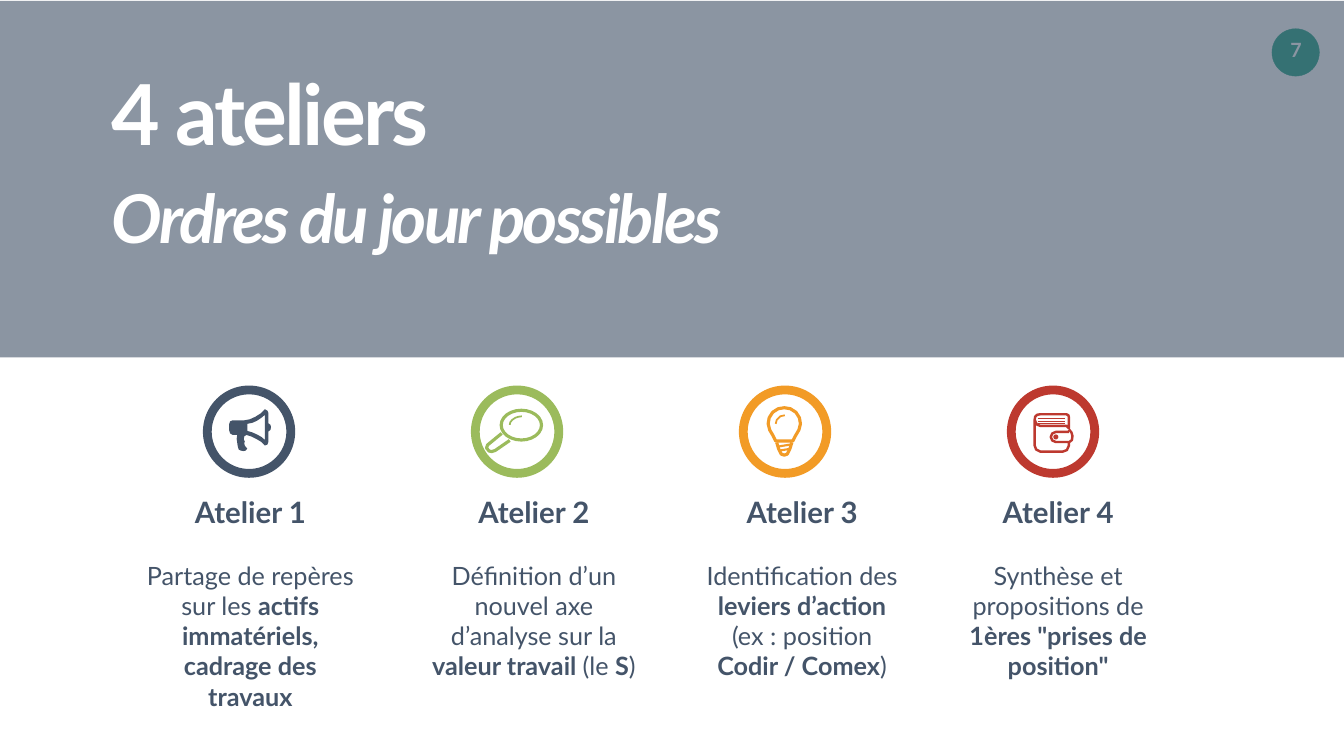
"""Builds the slide of four workshops with their possible agendas."""
from lxml import etree
from pptx import Presentation
from pptx.dml.color import RGBColor
from pptx.enum.shapes import MSO_SHAPE as SHAPE
from pptx.enum.text import MSO_AUTO_SIZE as AUTO, PP_ALIGN as ALIGN
from pptx.oxml.ns import qn
from pptx.util import Inches, Pt

NAVY = RGBColor(0x44, 0x54, 0x69)
GREEN = RGBColor(0x9B, 0xBB, 0x5C)
ORANGE = RGBColor(0xF2, 0x9B, 0x26)
RED = RGBColor(0xBD, 0x39, 0x2F)
TEAL = RGBColor(0x1E, 0xA1, 0x85)
WHITE = RGBColor(0xFF, 0xFF, 0xFF)

prs = Presentation()
prs.slide_width, prs.slide_height = Inches(26.66), Inches(15)
COL, ROW = prs.slide_width / 100, prs.slide_height / 100
UNIT = Inches(0.01)
s = prs.slides.add_slide(prs.slide_layouts[6])


def paint(sp, fill=None, line=None, width=0):
    sp.shadow.inherit = False
    for part, color in ((sp.fill, fill), (sp.line.fill, line)):
        if color is None:
            part.background()
        else:
            part.solid()
            part.fore_color.rgb = color
    if line is not None:
        sp.line.width = Pt(width)


def add_run(p, text, size, color, **style):
    r = p.add_run()
    r.text = text
    r.font.color.rgb = color
    for name, value in {"name": "Lato", "size": Pt(size), **style}.items():
        setattr(r.font, name, value)
    return r


badge = s.shapes.add_shape(SHAPE.OVAL, int(94.64 * COL), int(3.8 * ROW), Inches(0.94), Inches(0.94))
paint(badge, TEAL, TEAL, 0.5)
tb = s.shapes.add_textbox(int(94.79 * COL), int(4.4 * ROW), int(3.3 * COL), int(4.47 * ROW))
tf = tb.text_frame
for name, value in {"word_wrap": False, "margin_left": Inches(0.2), "margin_right": Inches(0.2),
                    "margin_top": Inches(0.1), "margin_bottom": Inches(0.1)}.items():
    setattr(tf, name, value)
tf.paragraphs[0].alignment = ALIGN.CENTER
add_run(tf.paragraphs[0], "7", 28, WHITE, bold=True)

banner = s.shapes.add_shape(SHAPE.RECTANGLE, 0, int(0.13 * ROW), prs.slide_width, int(47.13 * ROW))
paint(banner, NAVY)
color = banner.fill._xPr.find(qn("a:solidFill"))[0]
etree.SubElement(color, qn("a:alpha")).set("val", "62000")

tf = s.shapes.add_textbox(int(7.95 * COL), int(7.87 * ROW), int(49.2 * COL), int(12.6 * ROW)).text_frame
tf.word_wrap = True
for i, (text, size, italic) in enumerate([("4 ateliers", 120, False),
                                          ("Ordres du jour possibles", 96, True)]):
    p = tf.add_paragraph() if i else tf.paragraphs[0]
    p.space_before = Pt(size * 0.2)
    r = add_run(p, text, size, WHITE, bold=True, italic=italic)
    r.font._element.set("spc", "-400")

MEGAPHONE = [
    [(135, 83), (134, 88), (130, 91), (130, 111), (128, 117), (123, 119), (116, 112), (106, 106),
     (96, 101), (86, 98), (82, 101), (81, 107), (83, 111), (82, 115), (83, 119), (85, 122),
     (88, 125), (85, 129), (80, 130), (75, 129), (71, 127), (69, 120), (68, 113), (67, 106),
     (68, 98), (59, 98), (54, 95), (52, 89), (52, 77), (54, 71), (59, 69), (82, 69), (93, 67),
     (104, 62), (115, 55), (123, 47), (128, 50), (130, 55), (130, 75), (134, 78)],
    [(123, 58), (116, 64), (107, 70), (98, 74), (88, 76), (88, 90), (98, 93), (107, 97),
     (116, 102), (123, 108)]]
HANDLE = [(61, 95), (33, 118), (31, 124), (36, 130), (41, 131), (48, 129), (77, 109)]
LENS_GLINT = [(77, 78), (78, 73), (82, 68), (88, 64), (94, 62), (101, 61)]
BULB = [(90, 44), (102, 46), (113, 53), (120, 64), (122, 76), (119, 88), (112, 100), (107, 110),
        (73, 110), (68, 100), (61, 88), (58, 76), (60, 64), (67, 53), (78, 46), (90, 44)]
SOCKET = [(75, 113), (79, 126), (84, 136), (90, 138), (96, 136), (101, 126), (105, 113)]
BULB_GLINT = [(73, 76), (75, 68), (82, 61), (91, 59)]
WALLET = [(55, 68), (56, 62), (60, 58), (66, 57), (118, 57), (122, 59), (123, 63), (123, 85),
          (118, 80), (66, 80), (59, 77), (55, 68), (55, 119), (58, 127), (66, 131), (111, 131),
          (119, 128), (123, 119), (123, 112)]
CLASP = [(123, 92), (97, 92), (90, 95), (87, 102), (90, 109), (97, 112), (124, 112), (129, 108),
         (130, 100), (128, 93), (123, 87)]
CARDS = [[(61, y), (116, y)] for y in (65, 71, 76)]

WORKSHOPS = [
    (NAVY, 9.79, 17.67, [["Partage de repères sur les ", "actifs immatériels, cadrage des travaux"]],
     MEGAPHONE, [], []),
    (GREEN, 30.76, 17.93,
     [["Définition d’un nouvel axe d’analyse sur la", " valeur travail ", "(le ", "S", ")"]],
     [], [(HANDLE, 4.5), (LENS_GLINT, 2.5)], [(60, 49, 80, 59, False)]),
    (ORANGE, 51.69, 15.98,
     [["Identification des ", "leviers d’action"], ["(ex : position ", "Codir / Comex", ")"]],
     [], [(BULB, 4.5), (SOCKET, 4.5), ([(78, 121), (102, 117)], 3), ([(81, 129), (99, 126)], 3),
          (BULB_GLINT, 2.5)], []),
    (RED, 70.74, 15.98, [["Synthèse et propositions de ", "1ères \"prises de position\""]],
     [], [(WALLET, 3.5), (CLASP, 3.5)] + [(card, 1.75) for card in CARDS], [(92, 97, 10, 10, True)]),
]

for n, (color, left, width, agenda, solid, strokes, ovals) in enumerate(WORKSHOPS):
    x, y = int((15.1 + 19.94 * n) * COL), int(51 * ROW)
    ring = s.shapes.add_shape(SHAPE.DONUT, x, y, Inches(1.83), Inches(1.83))
    ring.adjustments[0] = 0.095
    paint(ring, color)

    if solid:
        fb = s.shapes.build_freeform(*solid[0][0], scale=UNIT)
        fb.add_line_segments(solid[0][1:], close=True)
        for hole in solid[1:]:
            fb.move_to(*hole[0])
            fb.add_line_segments(hole[1:], close=True)
        paint(fb.convert_to_shape(x, y), color)
    for points, weight in strokes:
        fb = s.shapes.build_freeform(*points[0], scale=UNIT)
        fb.add_line_segments(points[1:], close=False)
        paint(fb.convert_to_shape(x, y), None, color, weight)
    for ox, oy, w, h, filled in ovals:
        oval = s.shapes.add_shape(SHAPE.OVAL, x + ox * UNIT, y + oy * UNIT, w * UNIT, h * UNIT)
        paint(oval, color if filled else None, None if filled else color, 4.5)

    tf = s.shapes.add_textbox(int(left * COL), int(64.73 * ROW), int(width * COL), int(26.27 * ROW)).text_frame
    for name, value in {"word_wrap": True, "auto_size": AUTO.SHAPE_TO_FIT_TEXT,
                        "margin_left": Inches(0.2), "margin_right": Inches(0.2),
                        "margin_top": Inches(0.1), "margin_bottom": Inches(0.1)}.items():
        setattr(tf, name, value)
    p = tf.paragraphs[0]
    p.alignment = ALIGN.CENTER
    add_run(p, f"Atelier {n + 1}", 42, NAVY, bold=True)
    for i, parts in enumerate(agenda):
        p = tf.add_paragraph()
        p.alignment = ALIGN.CENTER
        p.space_before = Pt(0 if i else 43.2)
        for j, text in enumerate(parts):
            add_run(p, text, 36, NAVY, bold=j % 2 == 1)

prs.save("out.pptx")
